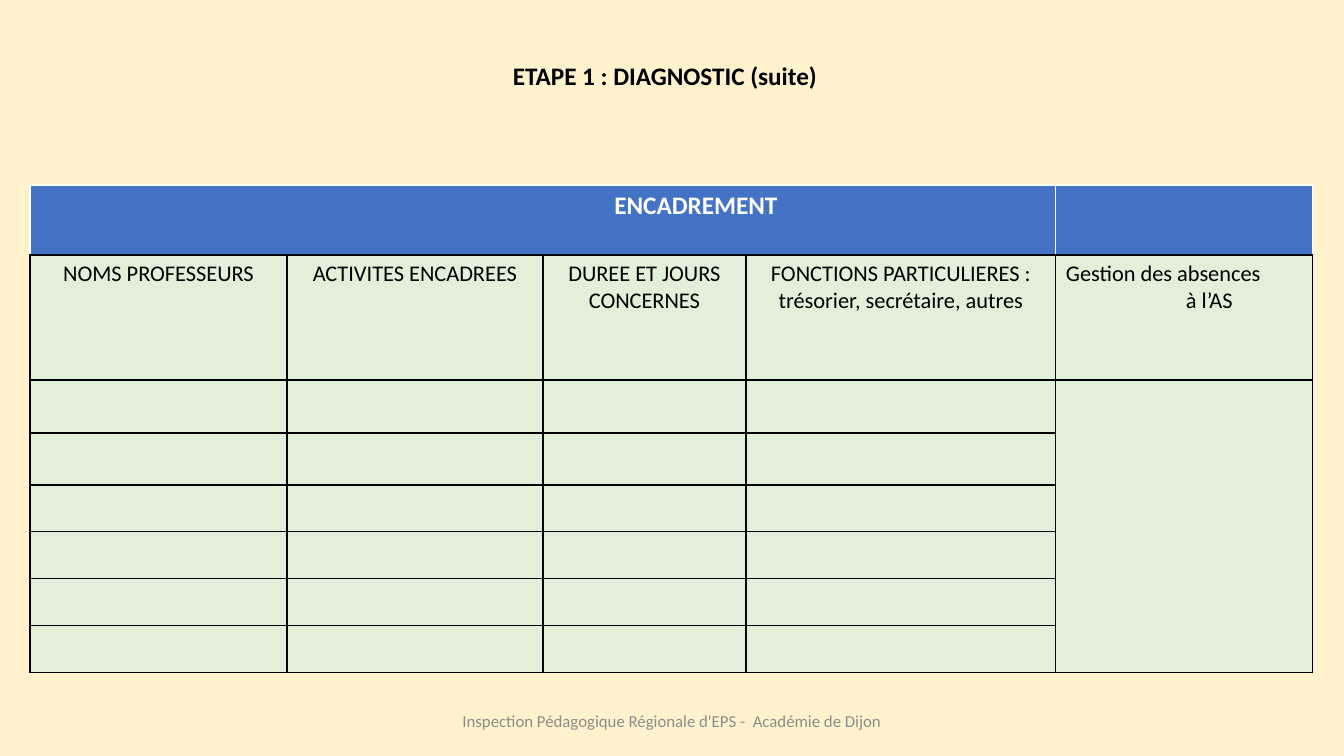
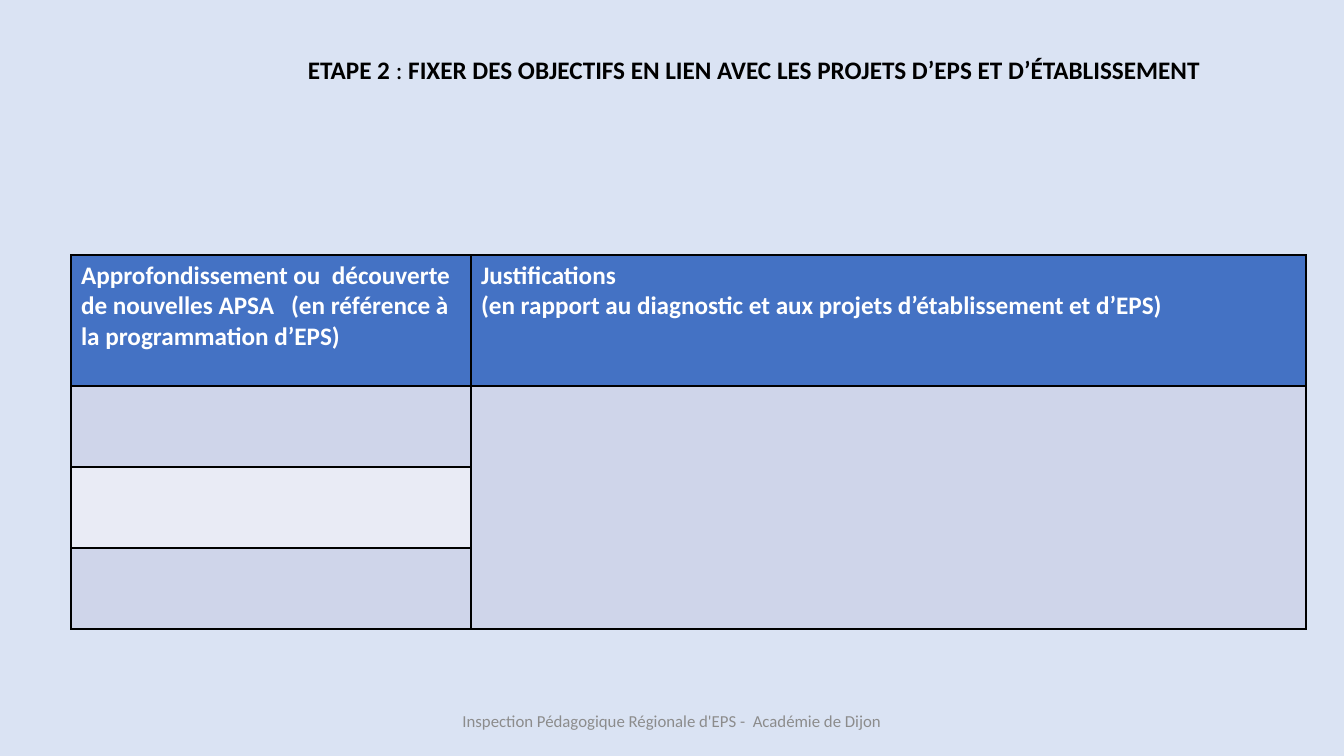
import pptx
import pptx.util
import pptx.dml.color
import pptx.enum.text
import pptx.oxml
import pptx.oxml.ns
import lxml.etree

SLIDE_WIDTH, SLIDE_HEIGHT = 1344, 756
EMU_PER_PX = 12192000 / SLIDE_WIDTH
FONT = "Calibri"
FOOTER = "Inspection Pédagogique Régionale d'EPS -  Académie de Dijon"
COLORS = {
    "cream": "FFF2CC",
    "pale_blue": "DAE3F3",
    "header": "4472C4",
    "green": "E2F0D9",
    "band_dark": "CFD5EA",
    "band_light": "E9EBF5",
    "footer": "8C8C8C",
    "black": "000000",
    "white": "FFFFFF",
}
LEFT = pptx.enum.text.PP_ALIGN.LEFT
CENTER = pptx.enum.text.PP_ALIGN.CENTER


def px(length):
    return pptx.util.Emu(round(length * EMU_PER_PX))


def rgb(name):
    return pptx.dml.color.RGBColor.from_string(COLORS[name])


def write_text(frame, lines, size=18, color="black", bold=False, align=LEFT, indents=()):
    """Write one paragraph per line; a line is a string or a list of (text, bold)."""
    for index, line in enumerate(lines):
        paragraph = frame.paragraphs[0] if index == 0 else frame.add_paragraph()
        paragraph.alignment = align
        if index < len(indents):
            paragraph._p.get_or_add_pPr().set("marL", str(px(indents[index])))
        for text, run_bold in [(line, bold)] if isinstance(line, str) else line:
            run = paragraph.add_run()
            run.text = text
            run.font.name = FONT
            run.font.size = pptx.util.Pt(size)
            run.font.bold = run_bold
            run.font.color.rgb = rgb(color)


def add_text(slide, box, lines, wrap=True, middle=False, **text_format):
    frame = slide.shapes.add_textbox(*map(px, box)).text_frame
    frame.word_wrap = wrap
    if middle:
        frame.vertical_anchor = pptx.enum.text.MSO_ANCHOR.MIDDLE
    write_text(frame, lines, **text_format)


def add_slide(deck, background):
    """Add a blank slide with its background colour and the shared footer."""
    slide = deck.slides.add_slide(deck.slide_layouts[6])
    slide.background.fill.solid()
    slide.background.fill.fore_color.rgb = rgb(background)
    add_text(slide, (445, 701, 454, 40), [FOOTER], middle=True,
             size=12, color="footer", align=CENTER)
    return slide


def style_cell(cell, fill, edge="black", bottom="black"):
    properties = cell._tc.get_or_add_tcPr()
    for side, color in zip("LRTB", (edge, edge, edge, bottom)):
        line = lxml.etree.SubElement(properties, pptx.oxml.ns.qn(f"a:ln{side}"),
                                     w=str(pptx.util.Pt(1)))
        solid = lxml.etree.SubElement(line, pptx.oxml.ns.qn("a:solidFill"))
        lxml.etree.SubElement(solid, pptx.oxml.ns.qn("a:srgbClr"), val=COLORS[color])
    cell.fill.solid()
    cell.fill.fore_color.rgb = rgb(fill)


def add_grid(slide, left, top, widths, heights, row_fills, header_edge="black"):
    """Add a table whose last column is merged below its headings."""
    table = slide.shapes.add_table(len(heights), len(widths), px(left), px(top),
                                   px(sum(widths)), px(sum(heights))).table
    table.first_row = table.horz_banding = False
    for column, width in zip(table.columns, widths):
        column.width = px(width)
    for index, (row, height) in enumerate(zip(table.rows, heights)):
        row.height = px(height)
        for cell in row.cells:
            style_cell(cell, row_fills[index], header_edge if index == 0 else "black")
    return table


def merge_last_column(table, first_row):
    last_column = len(table.columns) - 1
    table.cell(first_row, last_column).merge(
        table.cell(len(table.rows) - 1, last_column))


def build_diagnostic(deck):
    slide = add_slide(deck, "cream")
    heights = [70, 125, 53, 52] + [47] * 4
    staff = add_grid(slide, 30, 185, [257, 256, 203, 310, 257], heights,
                     ["header"] + ["green"] * 7, header_edge="white")
    staff.cell(0, 0).merge(staff.cell(0, 3))
    merge_last_column(staff, 2)
    write_text(staff.cell(0, 0).text_frame, ["ENCADREMENT"], color="white",
               bold=True, align=CENTER, indents=[306])
    headings = ["NOMS PROFESSEURS", "ACTIVITES ENCADREES", "DUREE ET JOURS CONCERNES",
                "FONCTIONS PARTICULIERES : trésorier, secrétaire, autres"]
    for column, heading in enumerate(headings):
        write_text(staff.cell(1, column).text_frame, [heading], size=16, align=CENTER)
    write_text(staff.cell(1, 4).text_frame, ["Gestion des absences", "à l’AS"],
               size=16, indents=[0, 120])
    add_text(slide, (17, 55, 1296, 72), ["ETAPE 1 : DIAGNOSTIC (suite)"],
             bold=True, align=CENTER)


def build_objectives(deck):
    slide = add_slide(deck, "pale_blue")
    title = [("ETAPE 2 ", True), (": ", False),
             ("FIXER DES OBJECTIFS EN LIEN AVEC LES PROJETS D’EPS ET D’ÉTABLISSEMENT", True)]
    add_text(slide, (298, 49, 921, 40), [title], wrap=False)
    choices = add_grid(slide, 71, 255, [400, 835], [131] + [81] * 3,
                       ["header", "band_dark", "band_light", "band_dark"])
    merge_last_column(choices, 1)
    headings = [
        ["Approfondissement ou  découverte de nouvelles APSA   "
         "(en référence à la programmation d’EPS)"],
        ["Justifications", "(en rapport au diagnostic et aux projets d’établissement et d’EPS)"],
    ]
    for column, lines in enumerate(headings):
        write_text(choices.cell(0, column).text_frame, lines, color="white", bold=True)


def main():
    deck = pptx.Presentation()
    deck.slide_width, deck.slide_height = px(SLIDE_WIDTH), px(SLIDE_HEIGHT)
    build_diagnostic(deck)
    build_objectives(deck)
    deck.save("out.pptx")


if __name__ == "__main__":
    main()
